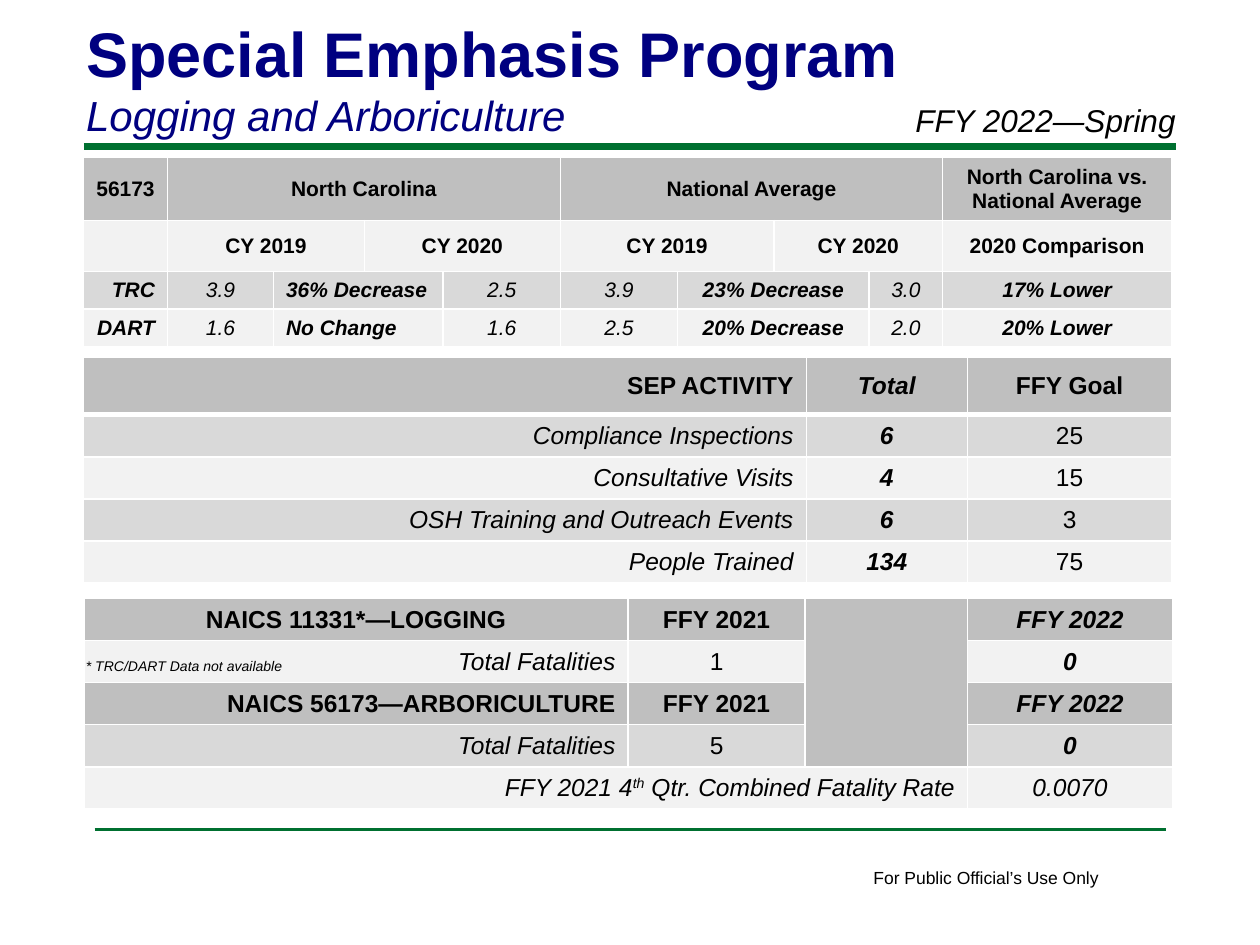
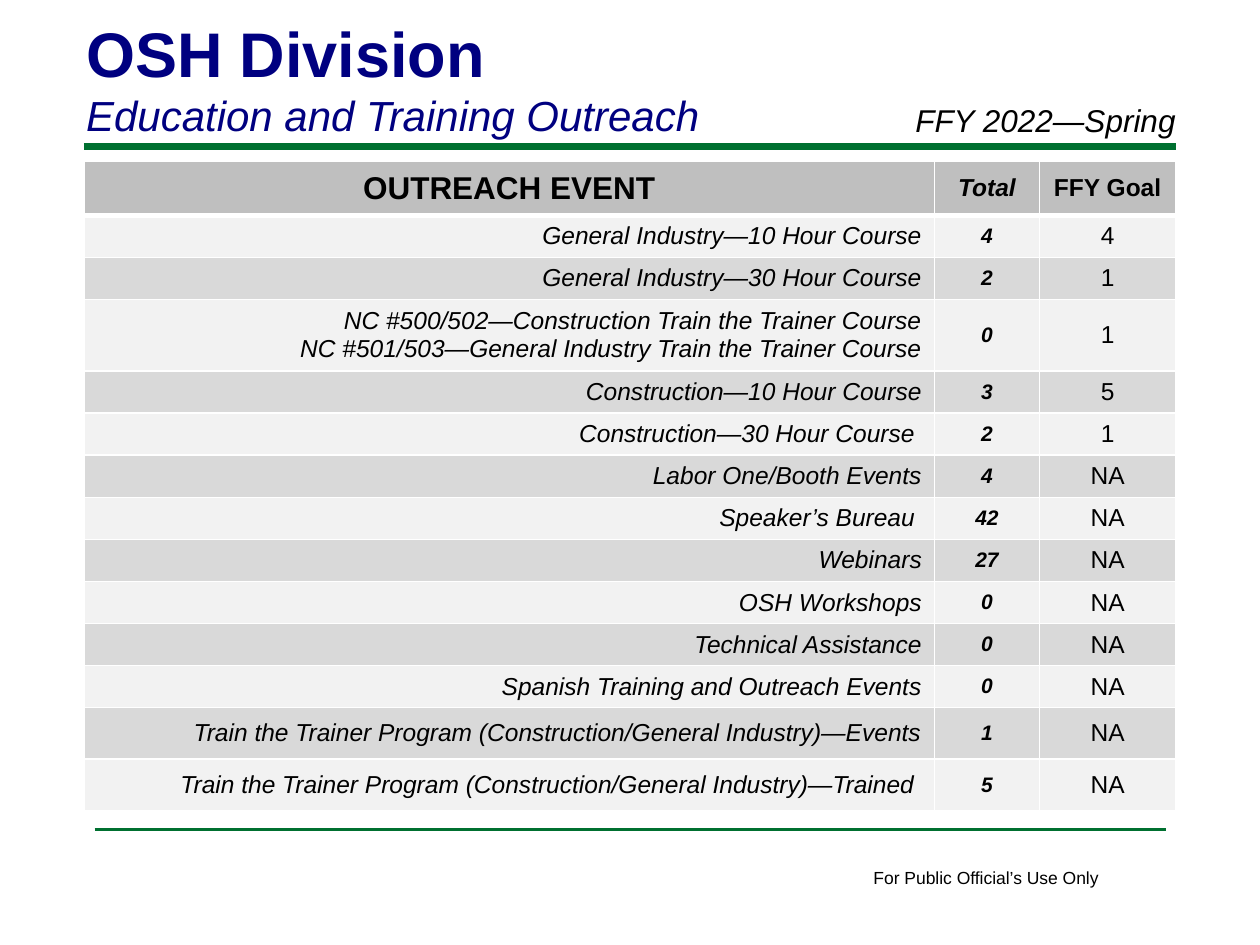
from itertools import takewhile
from lxml.etree import SubElement
from pptx import Presentation
from pptx.dml.color import RGBColor
from pptx.enum.shapes import MSO_CONNECTOR
from pptx.enum.text import MSO_ANCHOR, MSO_AUTO_SIZE, PP_ALIGN
from pptx.oxml.ns import qn
from pptx.util import Pt

FONT = "Arial"
NAVY, GREEN, BLACK, WHITE = "000080", "007030", "000000", "FFFFFF"
DARK, MID, PALE = "BFBFBF", "D9D9D9", "F2F2F2"
ALIGN = {"l": PP_ALIGN.LEFT, "c": PP_ALIGN.CENTER, "r": PP_ALIGN.RIGHT}
LEFT, UP = None, "up"

TERM = "FFY 2022—Spring"
FOOTER = "For Public Official’s Use Only"
NOTE = "* TRC/DART Data not available"

# Each row holds shade, height, cell styles (align, bold, italic, size) and texts.
RATES = [
    (DARK, 36, "cb cb cb cb cb cb cb cb cb cb",
     ["56173", "North Carolina", LEFT, LEFT, LEFT, "National Average", LEFT, LEFT, LEFT,
      "North Carolina vs. National Average"]),
    (PALE, 29, "cb cb cb cb cb cb cb cb cb cb",
     ["", "CY 2019", LEFT, "CY 2020", LEFT, "CY 2019", LEFT, "CY 2020", LEFT,
      "2020 Comparison"]),
    (MID, 21.5, "rbi ci lbi c ci ci cbi c ci cbi",
     ["TRC", "3.9", "36% Decrease", LEFT, "2.5", "3.9", "23% Decrease", LEFT, "3.0",
      "17% Lower"]),
    (PALE, 21.5, "rbi ci lbi c ci ci cbi c ci cbi",
     ["DART", "1.6", "No Change", LEFT, "1.6", "2.5", "20% Decrease", LEFT, "2.0",
      "20% Lower"]),
]
GOALS = [
    ("Compliance Inspections", "6", "25"),
    ("Consultative Visits", "4", "15"),
    ("OSH Training and Outreach Events", "6", "3"),
    ("People Trained", "134", "75"),
]
DEATHS = [
    (DARK, 24, "cb cb c cbi", ["NAICS 11331*—LOGGING", "FFY 2021", "", "FFY 2022"]),
    (PALE, 24, "ri c c cbi", ["Total Fatalities", "1", UP, "0"]),
    (DARK, 24, "rb cb c cbi", ["NAICS 56173—ARBORICULTURE", "FFY 2021", UP, "FFY 2022"]),
    (MID, 24, "ri c c cbi", ["Total Fatalities", "5", UP, "0"]),
    (PALE, 24, "ri c c ci",
     ["FFY 2021 4^th^ Qtr. Combined Fatality Rate", LEFT, LEFT, "0.0070"]),
]
EVENTS = [
    ("General Industry—10 Hour Course", "4", "4"),
    ("General Industry—30 Hour Course", "2", "1"),
    ("NC #500/502—Construction Train the Trainer Course\n"
     "NC #501/503—General Industry Train the Trainer Course", "0", "1"),
    ("Construction—10 Hour Course", "3", "5"),
    ("Construction—30 Hour Course ", "2", "1"),
    ("Labor One/Booth Events", "4", "NA"),
    ("Speaker’s Bureau ", "42", "NA"),
    ("Webinars", "27", "NA"),
    ("OSH Workshops", "0", "NA"),
    ("Technical Assistance", "0", "NA"),
    ("Spanish Training and Outreach Events", "0", "NA"),
    ("Train the Trainer Program (Construction/General Industry)—Events", "1", "NA"),
    ("Train the Trainer Program (Construction/General Industry)—Trained ", "5", "NA"),
]


def tint(code):
    return RGBColor.from_string(code)


def style(para, size, color=BLACK, bold=False, italic=False):
    font = para.font
    font.name, font.size, font.bold, font.italic = FONT, Pt(size), bold, italic
    font.color.rgb = tint(color)


def rule(slide, left, right, top, width):
    line = slide.shapes.add_connector(
        MSO_CONNECTOR.STRAIGHT, Pt(left), Pt(top), Pt(right), Pt(top))
    line.line.color.rgb = tint(GREEN)
    line.line.width = Pt(width)
    SubElement(line._element.spPr, qn("a:effectLst"))


def label(slide, text, box, size, italic=False, wrap=False):
    frame = slide.shapes.add_textbox(*map(Pt, box)).text_frame
    frame.word_wrap = wrap
    frame.text = text
    style(frame.paragraphs[0], size, italic=italic)


def start(deck, head, sub):
    slide = deck.slides.add_slide(deck.slide_layouts[5])
    rule(slide, 48, 672, 84, 4)
    rule(slide, 54, 666, 474, 2)
    label(slide, FOOTER, (492, 492, 145, 19.5), 10)
    title = slide.shapes.title
    title.left, title.top, title.width, title.height = map(Pt, (42, 4.5, 594, 80))
    frame = title.text_frame
    frame.auto_size = MSO_AUTO_SIZE.NONE
    frame.vertical_anchor = MSO_ANCHOR.TOP
    frame.text = f"{head}\n{sub}"
    for para in frame.paragraphs:
        para.alignment = PP_ALIGN.LEFT
    style(frame.paragraphs[0], 36, NAVY, bold=True)
    style(frame.paragraphs[1], 24, NAVY, italic=True)
    label(slide, TERM, (516, 54, 180, 29), 18, italic=True, wrap=True)
    return slide


def edge(cell, sides):
    props = cell._tc.get_or_add_tcPr()
    for side, width in sides.items():
        line = SubElement(props, qn(f"a:ln{side}"), w=str(Pt(width)))
        fill = SubElement(line, qn("a:solidFill"))
        SubElement(fill, qn("a:srgbClr"), val=WHITE)


def write(cell, text, code, size):
    marks = code.rstrip("0123456789")
    size = int(code[len(marks):] or size)
    frame = cell.text_frame
    for num, part in enumerate(text.split("\n")):
        para = frame.add_paragraph() if num else frame.paragraphs[0]
        for odd, piece in enumerate(part.split("^") if part else []):
            run = para.add_run()
            run.text = piece
            if odd % 2:
                run._r.get_or_add_rPr().set("baseline", "30000")
        para.alignment = ALIGN[marks[0]]
        style(para, size, bold="b" in marks, italic="i" in marks)


def grid(slide, left, top, cols, rows, size, thick=1):
    """Draw a table, joining cells over the LEFT and UP marks."""
    high = sum(row[1] for row in rows)
    table = slide.shapes.add_table(
        len(rows), len(cols), Pt(left), Pt(top), Pt(sum(cols)), Pt(high)).table
    table.first_row = table.horz_banding = False
    for col, width in zip(table.columns, cols):
        col.width = Pt(width)
    for y, (shade, tall, codes, texts) in enumerate(rows):
        table.rows[y].height = Pt(tall)
        for x, (text, code) in enumerate(zip(texts, codes.split())):
            cell = table.cell(y, x)
            edge(cell, {"L": 1, "R": 1, "T": thick if y == 1 else 1,
                        "B": thick if y == 0 else 1})
            cell.fill.solid()
            cell.fill.fore_color.rgb = tint(shade)
            cell.vertical_anchor = MSO_ANCHOR.MIDDLE
            write(cell, "" if text in (LEFT, UP) else text, code, size)
    for y, row in enumerate(rows):
        for x, text in enumerate(row[3]):
            if text in (LEFT, UP):
                continue
            wide = len(list(takewhile(lambda t: t is LEFT, row[3][x + 1:])))
            deep = len(list(takewhile(lambda r: r[3][x] == UP, rows[y + 1:])))
            if wide or deep:
                table.cell(y, x).merge(table.cell(y + deep, x + wide))


def band(head, items, shades, codes, tall):
    return [head] + [(shades[n % 2], tall(item[0]), codes, item)
                     for n, item in enumerate(items)]


def height(text):
    if "\n" in text:
        return 41
    return 29.5 if text.startswith("Train") else 24


def main():
    deck = Presentation()
    deck.slide_width, deck.slide_height = Pt(720), Pt(540)

    slide = start(deck, "Special Emphasis Program", "Logging and Arboriculture")
    head = (DARK, 33, "rb cbi cb", ("SEP ACTIVITY", "Total", "FFY Goal"))
    goals = band(head, GOALS, (MID, PALE), "ri cbi c", height)
    grid(slide, 47.75, 204, (413, 92, 117), goals, 14, 3)
    grid(slide, 48, 342, (311, 101, 93, 117), DEATHS, 14)
    grid(slide, 47.75, 90, (48, 60.5, 52, 45, 67, 67, 55, 54.5, 42, 131), RATES, 12)
    label(slide, NOTE, (42, 372, 128, 17), 8, italic=True)

    slide = start(deck, "OSH Division", "Education and Training Outreach")
    head = (DARK, 31, "cb18 cbi cb", ("OUTREACH EVENT", "Total", "FFY Goal"))
    events = band(head, EVENTS, (PALE, MID), "ri cbi12 c", height)
    grid(slide, 48, 92, (486, 60, 78), events, 14, 3)

    deck.save("out.pptx")


if __name__ == "__main__":
    main()
